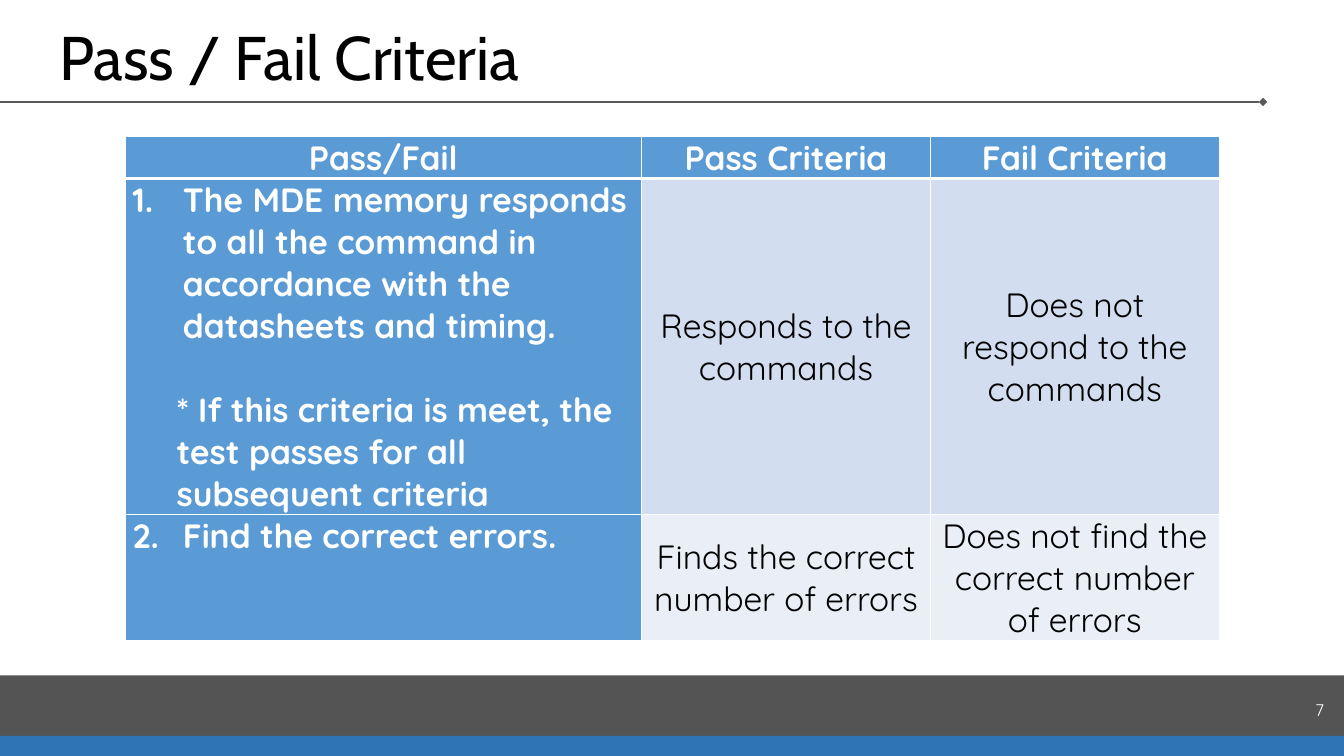
from dataclasses import dataclass

import lxml.etree
import pptx
import pptx.dml.color
import pptx.enum.shapes
import pptx.enum.text
import pptx.oxml.ns
import pptx.util

Pt = pptx.util.Pt
qn = pptx.oxml.ns.qn
ALIGN = pptx.enum.text.PP_ALIGN
ANCHOR = pptx.enum.text.MSO_ANCHOR


@dataclass(frozen=True)
class Theme:
    heading_font: str = "Cabin"
    body_font: str = "Quicksand"
    title_size: int = 44
    table_size: int = 24
    number_size: int = 12
    black: str = "000000"
    white: str = "FFFFFF"
    rule: str = "595959"
    strip: str = "2E75B6"
    header: str = "5B9BD5"
    bands: tuple = ("D2DEEF", "EAEFF7")


THEME = Theme()
HEADERS = ["Pass/Fail", "Pass Criteria", "Fail Criteria"]
CRITERIA = [
    (
        "The MDE memory responds to all the command in accordance with the datasheets and timing.",
        "* If this criteria is meet, the test passes for all subsequent criteria",
        "Responds to the commands",
        "Does not respond to the commands",
    ),
    (
        "Find the correct errors.",
        None,
        "Finds the correct number of errors",
        "Does not find the correct number of errors",
    ),
]


def rgb(color):
    return pptx.dml.color.RGBColor.from_string(color)


def add_element(parent, tag, **attributes):
    element = lxml.etree.SubElement(parent, qn(tag))
    for name, value in attributes.items():
        element.set(name, str(value))
    return element


def write_text(paragraph, text, size=THEME.table_size, font=THEME.body_font, color=THEME.white,
               bold=False, align=ALIGN.LEFT, margin=0, indent=0, number=None,
               space_before=0, line_spacing=1.0):
    properties = paragraph._p.get_or_add_pPr()
    properties.set("marL", str(Pt(margin)))
    properties.set("indent", str(Pt(indent)))
    if number:
        add_element(properties, "a:buFont", typeface="+mj-lt")
        add_element(properties, "a:buAutoNum", type="arabicPeriod", startAt=number)
    paragraph.alignment = align
    paragraph.line_spacing = line_spacing
    if space_before:
        paragraph.space_before = Pt(space_before)
    run = paragraph.add_run()
    run.text = text
    run.font.size = Pt(size)
    run.font.name = font
    run.font.bold = bold
    run.font.color.rgb = rgb(color)


def add_bar(slide, box, color, opacity=100):
    shape = slide.shapes.add_shape(pptx.enum.shapes.MSO_SHAPE.RECTANGLE, *map(Pt, box))
    shape.shadow.inherit = False
    shape.fill.solid()
    shape.fill.fore_color.rgb = rgb(color)
    shape.line.fill.background()
    if opacity < 100:
        color_element = shape._element.spPr.find(".//" + qn("a:srgbClr"))
        add_element(color_element, "a:alpha", val=opacity * 1000)


def add_footer(slide, box, page):
    left, top, width, height = box
    strip_height = 14.4
    bar_height = height - strip_height
    add_bar(slide, (left, top, width, bar_height), THEME.black, opacity=67)
    add_bar(slide, (left, top + bar_height, width, strip_height), THEME.strip)
    number_box = slide.shapes.add_textbox(
        Pt(left + width - 223.2), Pt(top + 10), Pt(216), Pt(28.8))
    frame = number_box.text_frame
    frame.word_wrap = True
    frame.vertical_anchor = ANCHOR.MIDDLE
    write_text(frame.paragraphs[0], page, size=THEME.number_size, align=ALIGN.RIGHT)


def add_heading(slide, box, text):
    left, top, width, height = box
    title = slide.shapes.title
    title.left, title.top, title.width, title.height = (
        Pt(left + 35.3), Pt(top + 13.7), Pt(828), Pt(height - 15.9))
    frame = title.text_frame
    frame.auto_size = pptx.enum.text.MSO_AUTO_SIZE.NONE
    frame.word_wrap = True
    frame.vertical_anchor = ANCHOR.BOTTOM
    write_text(frame.paragraphs[0], text, size=THEME.title_size, font=THEME.heading_font,
               color=THEME.black, line_spacing=0.9)
    rule = slide.shapes.add_connector(
        pptx.enum.shapes.MSO_CONNECTOR.STRAIGHT,
        Pt(left), Pt(top + height), Pt(left + width), Pt(top + height))
    rule.line.color.rgb = rgb(THEME.rule)
    rule.line.width = Pt(1)
    add_element(rule.line._get_or_add_ln(), "a:tailEnd", type="diamond")
    add_element(rule._element.spPr, "a:effectLst")


def format_cell(cell, color, anchor=ANCHOR.TOP, top_border=1, bottom_border=1):
    cell.margin_left = cell.margin_right = Pt(5.4)
    cell.margin_top = cell.margin_bottom = 0
    cell.vertical_anchor = anchor
    properties = cell._tc.get_or_add_tcPr()
    for side, width in zip("LRTB", (1, 1, top_border, bottom_border)):
        line = add_element(properties, "a:ln" + side, w=Pt(width))
        add_element(add_element(line, "a:solidFill"), "a:srgbClr", val=THEME.white)
    cell.fill.solid()
    cell.fill.fore_color.rgb = rgb(color)


def add_criteria_table(slide, box):
    line_height = 30
    row_lines = (1, 8, 3)
    first_width = 369
    left, top, width, height = box
    table = slide.shapes.add_table(
        len(row_lines), len(HEADERS), *map(Pt, (left, top, width, height))).table
    table.first_row = table.horz_banding = False
    other_width = (width - first_width) / 2
    for column, column_width in zip(table.columns, (first_width, other_width, other_width)):
        column.width = Pt(column_width)
    for row, lines in zip(table.rows, row_lines):
        row.height = Pt(lines * line_height)

    for column, header in enumerate(HEADERS):
        cell = table.cell(0, column)
        format_cell(cell, THEME.header, bottom_border=3)
        write_text(cell.text_frame.paragraphs[0], header, bold=True, align=ALIGN.CENTER)

    for row, (criterion, note, *outcomes) in enumerate(CRITERIA, start=1):
        top_border = 3 if row == 1 else 1
        cell = table.cell(row, 0)
        format_cell(cell, THEME.header, top_border=top_border)
        write_text(cell.text_frame.paragraphs[0], criterion, bold=True,
                   margin=36, indent=-36, number=row)
        if note:
            write_text(cell.text_frame.add_paragraph(), note, bold=True,
                       margin=31.5, space_before=line_height)
        for column, outcome in enumerate(outcomes, start=1):
            cell = table.cell(row, column)
            format_cell(cell, THEME.bands[row - 1], ANCHOR.MIDDLE, top_border)
            write_text(cell.text_frame.paragraphs[0], outcome,
                       color=THEME.black, align=ALIGN.CENTER)


def main():
    presentation = pptx.Presentation()
    presentation.slide_width = Pt(960)
    presentation.slide_height = Pt(540)
    slide = presentation.slides.add_slide(presentation.slide_layouts[5])
    add_footer(slide, (0, 482.4, 960, 57.6), "7")
    add_heading(slide, (0, 0, 902.2, 72.8), "Pass / Fail Criteria")
    add_criteria_table(slide, (89.3, 97.5, 781.6, 360))
    presentation.save("out.pptx")


if __name__ == "__main__":
    main()
